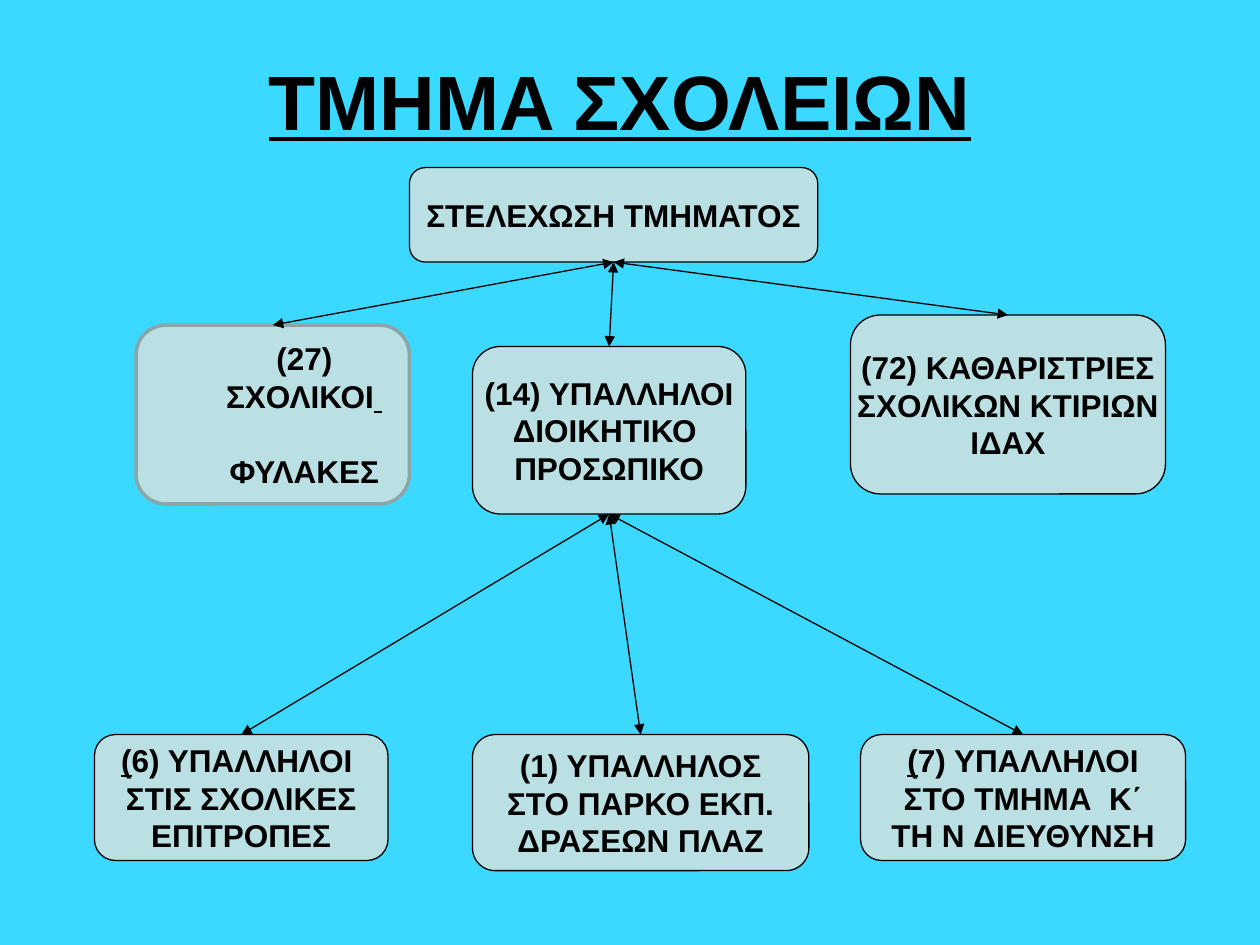
import pptx
import pptx.util
import pptx.dml.color
import pptx.enum.shapes
import pptx.enum.text
import pptx.oxml.ns
import lxml.etree

Inches = pptx.util.Inches
Pt = pptx.util.Pt
SHAPES = pptx.enum.shapes.MSO_SHAPE
BOTTOM, TOP = 2, 0

COLORS = {
    "background": "3BD8FF",
    "box": "BBE0E3",
    "ink": "000000",
    "guards_border": "8AA6A8",
}


def rgb(name):
    return pptx.dml.color.RGBColor.from_string(COLORS[name])


def format_paragraph(paragraph, size):
    paragraph.alignment = pptx.enum.text.PP_ALIGN.CENTER
    font = paragraph.font
    font.name = "Arial"
    font.size = Pt(size)
    font.bold = True
    font.color.rgb = rgb("ink")


def set_title(slide, text):
    title = slide.shapes.title
    title.left, title.top = Inches(1.42), Inches(0.33)
    title.width, title.height = Inches(7), Inches(0.92)
    frame = title.text_frame
    frame.text = text
    frame.vertical_anchor = pptx.enum.text.MSO_ANCHOR.MIDDLE
    format_paragraph(frame.paragraphs[0], 44)
    frame.paragraphs[0].font.underline = True


def add_box(slide, bounds, lines, geometry=SHAPES.ROUNDED_RECTANGLE,
            border="ink", border_width=0.75, wrap=False):
    box = slide.shapes.add_shape(geometry, *map(Inches, bounds))
    box.shadow.inherit = False
    box.fill.solid()
    box.fill.fore_color.rgb = rgb("box")
    box.line.color.rgb = rgb(border)
    box.line.width = Pt(border_width)
    frame = box.text_frame
    frame.word_wrap = wrap
    frame.vertical_anchor = pptx.enum.text.MSO_ANCHOR.MIDDLE
    for index, line in enumerate(lines):
        paragraph = frame.add_paragraph() if index else frame.paragraphs[0]
        format_paragraph(paragraph, 18)
        for text, underlined in [(line, False)] if isinstance(line, str) else line:
            run = paragraph.add_run()
            run.text = text
            if underlined:
                run.font.underline = True
    return box


def add_double_arrow(slide, parent, child):
    arrow = slide.shapes.add_connector(
        pptx.enum.shapes.MSO_CONNECTOR.STRAIGHT, 0, 0, 0, 0)
    arrow.begin_connect(parent, BOTTOM)
    arrow.end_connect(child, TOP)
    arrow.line.color.rgb = rgb("ink")
    arrow.line.width = Pt(0.75)
    qn = pptx.oxml.ns.qn
    line = arrow.line._get_or_add_ln()
    for end in ("a:headEnd", "a:tailEnd"):
        lxml.etree.SubElement(line, qn(end), type="triangle")
    lxml.etree.SubElement(arrow._element.spPr, qn("a:effectLst"))


def main():
    deck = pptx.Presentation()
    deck.slide_width, deck.slide_height = Inches(10), Inches(7.5)
    slide = deck.slides.add_slide(deck.slide_layouts[5])
    slide.background.fill.solid()
    slide.background.fill.fore_color.rgb = rgb("background")
    set_title(slide, "TMHMA ΣΧΟΛΕΙΩΝ")

    department = add_box(slide, (3.25, 1.33, 3.24, 0.75), ["ΣΤΕΛΕΧΩΣΗ ΤΜΗΜΑΤΟΣ"],
                         geometry=SHAPES.FLOWCHART_ALTERNATE_PROCESS)
    committees = add_box(slide, (0.75, 5.83, 2.33, 1), [
        [("(", True), ("6) ΥΠΑΛΛΗΛΟΙ ", False)], "ΣΤΙΣ ΣΧΟΛΙΚΕΣ", "ΕΠΙΤΡΟΠΕΣ"])
    administration = add_box(slide, (3.75, 2.75, 2.17, 1.33), [
        "(14) ΥΠΑΛΛΗΛΟΙ", "ΔΙΟΙΚΗΤΙΚΟ ", "ΠΡΟΣΩΠΙΚΟ"])
    cleaners = add_box(slide, (6.75, 2.5, 2.5, 1.42), [
        "(72) ΚΑΘΑΡΙΣΤΡΙΕΣ", "ΣΧΟΛΙΚΩΝ ΚΤΙΡΙΩΝ", "ΙΔΑΧ"])
    directorate = add_box(slide, (6.83, 5.83, 2.58, 1), [
        [("(", True), ("7) ΥΠΑΛΛΗΛΟΙ", False)], "ΣΤΟ ΤΜΗΜΑ  Κ΄", "TH N ΔΙΕΥΘΥΝΣΗ"])
    park = add_box(slide, (3.75, 5.83, 2.67, 1.08), [
        "(1) ΥΠΑΛΛΗΛΟΣ", "ΣΤΟ ΠΑΡΚΟ ΕΚΠ.", "ΔΡΑΣΕΩΝ ΠΛΑΖ"])
    guards = add_box(slide, (1.08, 2.58, 2.17, 1.42), [
        "(27)", [("ΣΧΟΛΙΚΟΙ", False), (" ", True)], "ΦΥΛΑΚΕΣ"],
        border="guards_border", border_width=2, wrap=True)
    guards.text_frame.margin_left = Inches(0.6)
    guards.text_frame.paragraphs[-1].space_before = Pt(21)

    for parent, children in (
        (department, (guards, administration, cleaners)),
        (administration, (committees, park, directorate)),
    ):
        for child in children:
            add_double_arrow(slide, parent, child)

    deck.save("out.pptx")


if __name__ == "__main__":
    main()
